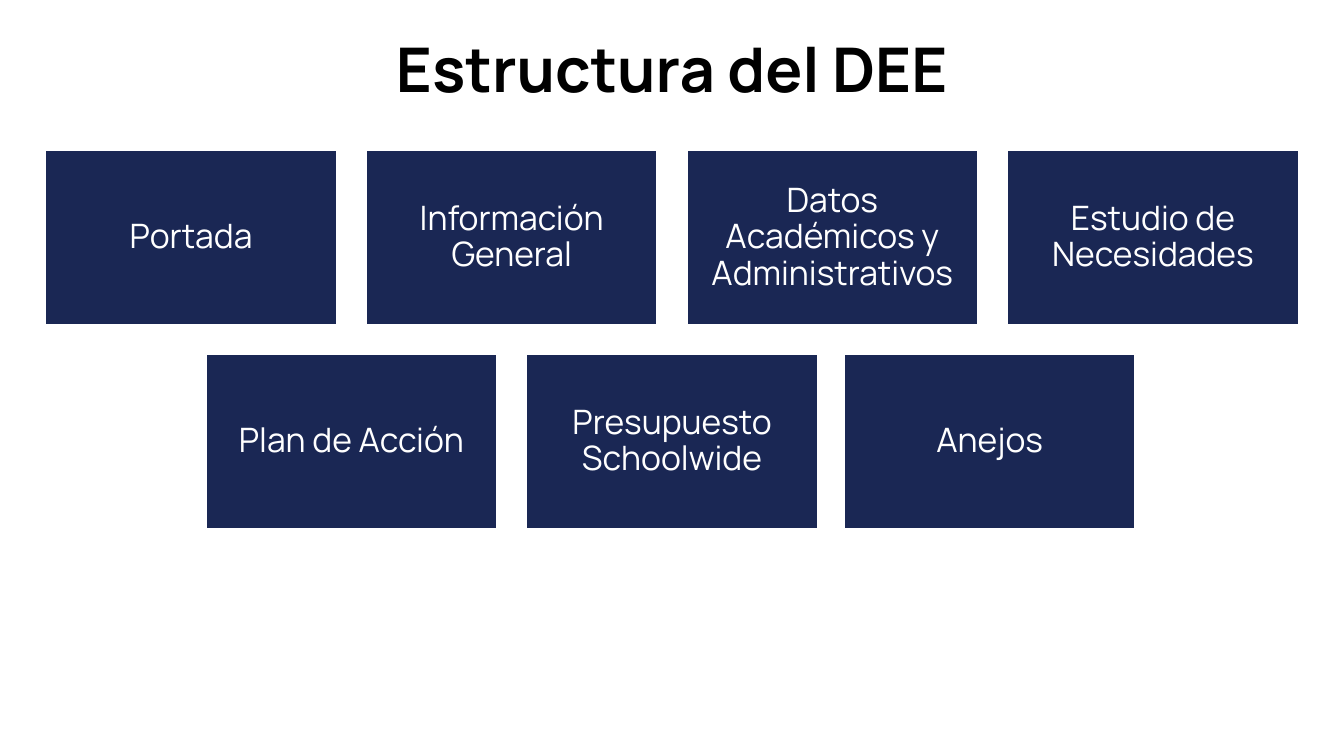
from dataclasses import dataclass

from pptx import Presentation
from pptx.dml.color import RGBColor
from pptx.enum.shapes import MSO_SHAPE
from pptx.enum.text import MSO_ANCHOR, MSO_AUTO_SIZE, PP_ALIGN
from pptx.slide import Slide
from pptx.text.text import TextFrame
from pptx.util import Inches, Pt

RECTANGLE = MSO_SHAPE.RECTANGLE
MIDDLE = MSO_ANCHOR.MIDDLE
CENTER = PP_ALIGN.CENTER
NO_AUTOFIT = MSO_AUTO_SIZE.NONE

NAVY = RGBColor(0x1A, 0x27, 0x54)
WHITE = RGBColor(0xFF, 0xFF, 0xFF)
BLACK = RGBColor(0x00, 0x00, 0x00)

SLIDE_W, SLIDE_H = 13.33, 7.5
CARD_W, CARD_H = 2.89, 1.74
GAP_X, GAP_Y = 0.29, 0.28
TOP = 1.49

TITLE_FORMAT = {"name": "Manrope", "size": Pt(44), "bold": True}
CARD_FORMAT = {"name": "Manrope", "size": Pt(24), "bold": False}
FRAME_FORMAT = {
    "word_wrap": True,
    "auto_size": NO_AUTOFIT,
    "vertical_anchor": MIDDLE,
}
MARGINS = ("margin_left", "margin_top", "margin_right", "margin_bottom")


@dataclass
class Card:
    text: str
    nudge: float = 0


@dataclass
class Row:
    left: float
    cards: list[Card]


ROWS = [
    Row(0.45, [
        Card("Portada"),
        Card("Información General"),
        Card("Datos Académicos y Administrativos"),
        Card("Estudio de Necesidades"),
    ]),
    Row(2.04, [
        Card("Plan de Acción"),
        Card("Presupuesto Schoolwide"),
        Card("Anejos", nudge=-0.03),
    ]),
]


def write_text(tf: TextFrame, text: str, font_format: dict, color: RGBColor) -> None:
    for name, value in FRAME_FORMAT.items():
        setattr(tf, name, value)
    p = tf.paragraphs[0]
    p.alignment = CENTER
    p.line_spacing = 0.9
    r = p.add_run()
    r.text = text
    for name, value in font_format.items():
        setattr(r.font, name, value)
    r.font.color.rgb = color


def add_title(s: Slide, text: str) -> None:
    title = s.shapes.title
    title.left, title.top = Inches(0), Inches(0.15)
    title.width, title.height = Inches(SLIDE_W), Inches(1.14)
    write_text(title.text_frame, text, TITLE_FORMAT, BLACK)


def add_card(s: Slide, card: Card, left: float, top: float) -> None:
    sp = s.shapes.add_shape(
        RECTANGLE, Inches(left), Inches(top), Inches(CARD_W), Inches(CARD_H)
    )
    sp.shadow.inherit = False
    sp.fill.solid()
    sp.fill.fore_color.rgb = NAVY
    sp.line.color.rgb = WHITE
    sp.line.width = Pt(1.5)
    tf = sp.text_frame
    for margin in MARGINS:
        setattr(tf, margin, Inches(0.1))
    write_text(tf, card.text, CARD_FORMAT, WHITE)


def main() -> None:
    prs = Presentation()
    prs.slide_width, prs.slide_height = Inches(SLIDE_W), Inches(SLIDE_H)
    s = prs.slides.add_slide(prs.slide_layouts.get_by_name("Title Only"))
    add_title(s, "Estructura del DEE")
    for i, row in enumerate(ROWS):
        top = TOP + i * (CARD_H + GAP_Y)
        for j, card in enumerate(row.cards):
            left = row.left + j * (CARD_W + GAP_X) + card.nudge
            add_card(s, card, left, top)
    prs.save("out.pptx")


if __name__ == "__main__":
    main()
